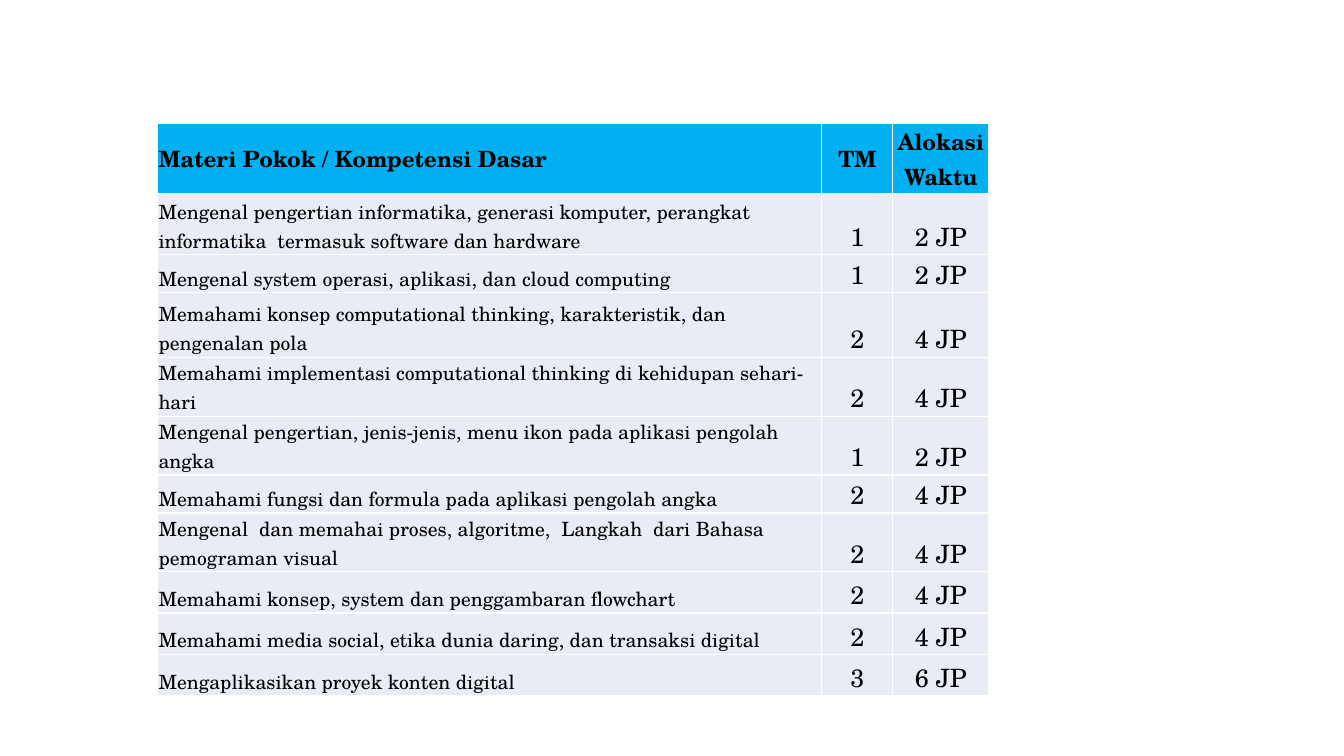
import dataclasses

import lxml.etree
import pptx
import pptx.dml.color
import pptx.enum.text
import pptx.oxml.ns
import pptx.table
import pptx.util

BLACK = pptx.dml.color.RGBColor(0x00, 0x00, 0x00)
WHITE = pptx.dml.color.RGBColor(0xFF, 0xFF, 0xFF)
SKY = pptx.dml.color.RGBColor(0x00, 0xB0, 0xF0)
PALE = pptx.dml.color.RGBColor(0xE9, 0xEB, 0xF5)
FONT = "TeX Gyre Schola"

SLIDE_W = pptx.util.Inches(13.33)
SLIDE_H = pptx.util.Inches(7.5)
LEFT, TOP = 11.72, 16.33
COLUMN_SHARES = (49.43, 5.28, 7.16)
HEADER_SHARE = 8.27
HEADINGS = ("Materi Pokok / Kompetensi Dasar", "TM", "Alokasi Waktu")
JP_PER_MEETING = 2


@dataclasses.dataclass(frozen=True)
class Topic:
    name: str
    meetings: int
    share: float = 5.47

    @property
    def texts(self) -> tuple[str, str, str]:
        return self.name, str(self.meetings), f"{self.meetings * JP_PER_MEETING} JP"


@dataclasses.dataclass(frozen=True)
class CellStyle:
    fill: pptx.dml.color.RGBColor
    anchor: pptx.enum.text.MSO_ANCHOR
    sizes: tuple[int, int, int]
    bold: bool


HEADER = CellStyle(SKY, pptx.enum.text.MSO_ANCHOR.MIDDLE, (16, 16, 16), True)
BODY = CellStyle(PALE, pptx.enum.text.MSO_ANCHOR.BOTTOM, (14, 18, 18), False)

TOPICS = (
    Topic("Mengenal pengertian informatika, generasi komputer, perangkat "
          "informatika  termasuk software dan hardware", 1, 8.13),
    Topic("Mengenal system operasi, aplikasi, dan cloud computing", 1, 4.53),
    Topic("Memahami konsep computational thinking, karakteristik, dan "
          "pengenalan pola", 2, 8.53),
    Topic("Memahami implementasi computational thinking di kehidupan sehari-hari", 2),
    Topic("Mengenal pengertian, jenis-jenis, menu ikon pada aplikasi pengolah angka", 1),
    Topic("Memahami fungsi dan formula pada aplikasi pengolah angka", 2, 4.53),
    Topic("Mengenal  dan memahai proses, algoritme,  Langkah  dari Bahasa "
          "pemograman visual", 2),
    Topic("Memahami konsep, system dan penggambaran flowchart", 2),
    Topic("Memahami media social, etika dunia daring, dan transaksi digital", 2),
    Topic("Mengaplikasikan proyek konten digital", 3),
)


def across(share: float) -> int:
    return round(SLIDE_W * share / 100)


def down(share: float) -> int:
    return round(SLIDE_H * share / 100)


def add_borders(cell: pptx.table._Cell) -> None:
    tcPr = cell._tc.get_or_add_tcPr()
    qn = pptx.oxml.ns.qn
    for side in ("a:lnL", "a:lnR", "a:lnT", "a:lnB"):
        ln = lxml.etree.SubElement(tcPr, qn(side), w=str(pptx.util.Pt(1)))
        fill = lxml.etree.SubElement(ln, qn("a:solidFill"))
        lxml.etree.SubElement(fill, qn("a:srgbClr"), val=str(WHITE))


def fill_row(table: pptx.table.Table, row: int, texts: tuple[str, ...],
             style: CellStyle) -> None:
    for col, (text, size) in enumerate(zip(texts, style.sizes)):
        cell = table.cell(row, col)
        add_borders(cell)
        cell.fill.solid()
        cell.fill.fore_color.rgb = style.fill
        cell.vertical_anchor = style.anchor
        cell.margin_left = cell.margin_right = cell.margin_top = pptx.util.Inches(0.01)
        cell.margin_bottom = 0
        p = cell.text_frame.paragraphs[0]
        p.text = text
        if col:
            p.alignment = pptx.enum.text.PP_ALIGN.CENTER
        font = p.runs[0].font
        font.name = FONT
        font.size = pptx.util.Pt(size)
        font.bold = style.bold
        font.color.rgb = BLACK


def add_syllabus(s: pptx.slide.Slide) -> None:
    row_shares = (HEADER_SHARE, *(topic.share for topic in TOPICS))
    table = s.shapes.add_table(
        len(row_shares), len(COLUMN_SHARES), across(LEFT), down(TOP),
        across(sum(COLUMN_SHARES)), down(sum(row_shares))).table
    table.horz_banding = False
    for column, share in zip(table.columns, COLUMN_SHARES):
        column.width = across(share)
    for row, share in zip(table.rows, row_shares):
        row.height = down(share)
    fill_row(table, 0, HEADINGS, HEADER)
    for i, topic in enumerate(TOPICS, start=1):
        fill_row(table, i, topic.texts, BODY)


def main() -> None:
    prs = pptx.Presentation()
    prs.slide_width, prs.slide_height = SLIDE_W, SLIDE_H
    s = prs.slides.add_slide(prs.slide_layouts[6])
    add_syllabus(s)
    prs.save("out.pptx")


if __name__ == "__main__":
    main()
